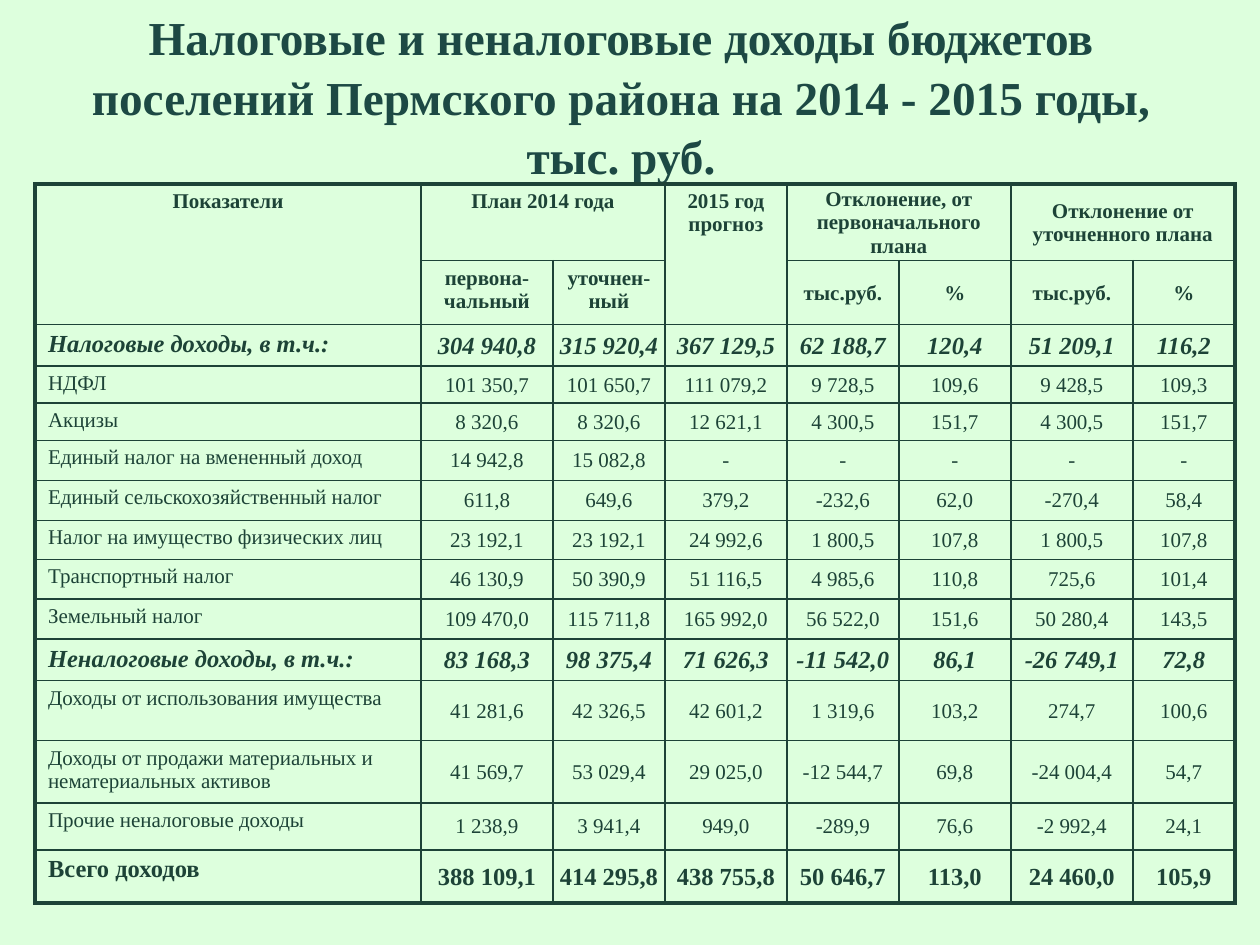
import pptx
import pptx.dml.color
import pptx.enum.text
import pptx.oxml.ns
import pptx.util
from lxml import etree

PX = 914400 // 126


class Theme:
    background = "DDFFDD"
    title_ink = "1D4944"
    ink = "1D4337"
    font = "Times New Roman"
    title_size = 27
    body_size = 12
    total_size = 14
    outer_line = 2.25
    inner_line = 1


TITLE = ("Налоговые и неналоговые доходы бюджетов поселений "
         "Пермского района на 2014 - 2015 годы, тыс. руб.")
TITLE_BOX = (54, 16, 1134, 158)
TABLE_CORNER = (35, 184)
COLUMN_WIDTHS = [386, 132, 112, 122, 112, 112, 122, 102]

# (row, column, rows spanned, columns spanned, text)
HEADERS = [
    (0, 0, 2, 1, "Показатели"),
    (0, 1, 1, 2, "План 2014 года"),
    (0, 3, 2, 1, "2015 год прогноз"),
    (0, 4, 1, 2, "Отклонение, от первоначального плана"),
    (0, 6, 1, 2, "Отклонение от уточненного плана"),
    (1, 1, 1, 1, "первона-чальный"),
    (1, 2, 1, 1, "уточнен-ный"),
    (1, 4, 1, 1, "тыс.руб."),
    (1, 5, 1, 1, "%"),
    (1, 6, 1, 1, "тыс.руб."),
    (1, 7, 1, 1, "%"),
]
HEADER_HEIGHTS = [72, 64]
FIRST_DEVIATION_COLUMN = 4

# (kind, row height, label, values)
INCOME = [
    ("group", 40, "Налоговые доходы, в т.ч.:",
     ["304 940,8", "315 920,4", "367 129,5", "62 188,7", "120,4", "51 209,1", "116,2"]),
    ("item", 36, "НДФЛ",
     ["101 350,7", "101 650,7", "111 079,2", "9 728,5", "109,6", "9 428,5", "109,3"]),
    ("item", 37, "Акцизы",
     ["8 320,6", "8 320,6", "12 621,1", "4 300,5", "151,7", "4 300,5", "151,7"]),
    ("item", 40, "Единый налог на вмененный доход",
     ["14 942,8", "15 082,8", "-", "-", "-", "-", "-"]),
    ("item", 40, "Единый сельскохозяйственный налог",
     ["611,8", "649,6", "379,2", "-232,6", "62,0", "-270,4", "58,4"]),
    ("item", 39, "Налог на имущество физических лиц",
     ["23 192,1", "23 192,1", "24 992,6", "1 800,5", "107,8", "1 800,5", "107,8"]),
    ("item", 40, "Транспортный налог",
     ["46 130,9", "50 390,9", "51 116,5", "4 985,6", "110,8", "725,6", "101,4"]),
    ("item", 40, "Земельный налог",
     ["109 470,0", "115 711,8", "165 992,0", "56 522,0", "151,6", "50 280,4", "143,5"]),
    ("group", 39, "Неналоговые доходы, в т.ч.:",
     ["83 168,3", "98 375,4", "71 626,3", "-11 542,0", "86,1", "-26 749,1", "72,8"]),
    ("item", 60, "Доходы от использования имущества",
     ["41 281,6", "42 326,5", "42 601,2", "1 319,6", "103,2", "274,7", "100,6"]),
    ("item", 59, "Доходы от продажи материальных и нематериальных активов",
     ["41 569,7", "53 029,4", "29 025,0", "-12 544,7", "69,8", "-24 004,4", "54,7"]),
    ("item", 47, "Прочие неналоговые доходы",
     ["1 238,9", "3 941,4", "949,0", "-289,9", "76,6", "-2 992,4", "24,1"]),
    ("total", 53, "Всего доходов",
     ["388 109,1", "414 295,8", "438 755,8", "50 646,7", "113,0", "24 460,0", "105,9"]),
]


def rgb(colour):
    return pptx.dml.color.RGBColor.from_string(colour)


def write(paragraph, text, size, colour, bold, italic=False, centred=True):
    align = pptx.enum.text.PP_ALIGN
    paragraph.alignment = align.CENTER if centred else align.LEFT
    run = paragraph.add_run()
    run.text = text
    run.font.name = Theme.font
    run.font.size = pptx.util.Pt(size)
    run.font.bold = bold
    run.font.italic = italic
    run.font.color.rgb = rgb(colour)


def draw_borders(cell, row, column, row_count, column_count):
    """Thick on the rim of the table, thin inside."""
    last_row = row + max(cell.span_height, 1) == row_count
    last_column = column + max(cell.span_width, 1) == column_count
    on_rim = {"lnL": column == 0, "lnR": last_column, "lnT": row == 0, "lnB": last_row}
    properties = cell._tc.get_or_add_tcPr()
    qn = pptx.oxml.ns.qn
    for side, rim in on_rim.items():
        width = pptx.util.Pt(Theme.outer_line if rim else Theme.inner_line)
        line = etree.SubElement(properties, qn("a:" + side), w=str(int(width)))
        fill = etree.SubElement(line, qn("a:solidFill"))
        etree.SubElement(fill, qn("a:srgbClr"), val=Theme.ink)


def set_layout(cell, compact):
    """Compact cells are centred vertically with almost no margins."""
    anchor = pptx.enum.text.MSO_ANCHOR
    cell.vertical_anchor = anchor.MIDDLE if compact else anchor.TOP
    left, top, right, bottom = (1, 1, 1, 0) if compact else (13, 6, 13, 6)
    cell.margin_left, cell.margin_right = left * PX, right * PX
    cell.margin_top, cell.margin_bottom = top * PX, bottom * PX


def add_title(slide):
    box = slide.shapes.add_textbox(*(length * PX for length in TITLE_BOX))
    frame = box.text_frame
    frame.word_wrap = True
    frame.vertical_anchor = pptx.enum.text.MSO_ANCHOR.MIDDLE
    heading = frame.paragraphs[0]
    heading.line_spacing = 1.05
    write(heading, TITLE, Theme.title_size, Theme.title_ink, bold=True)


def add_income_table(slide):
    heights = HEADER_HEIGHTS + [height for _, height, _, _ in INCOME]
    row_count, column_count = len(heights), len(COLUMN_WIDTHS)
    left, top = TABLE_CORNER
    table = slide.shapes.add_table(
        row_count, column_count, left * PX, top * PX,
        sum(COLUMN_WIDTHS) * PX, sum(heights) * PX).table
    table.first_row = table.horz_banding = False
    for column, width in zip(table.columns, COLUMN_WIDTHS):
        column.width = width * PX
    for row, height in zip(table.rows, heights):
        row.height = height * PX

    for row, column, rows, columns, text in HEADERS:
        cell = table.cell(row, column)
        if rows * columns > 1:
            cell.merge(table.cell(row + rows - 1, column + columns - 1))
        set_layout(cell, compact=column >= FIRST_DEVIATION_COLUMN)
        write(cell.text_frame.paragraphs[0], text, Theme.body_size, Theme.ink, bold=True)

    for row, (kind, _, label, values) in enumerate(INCOME, len(HEADER_HEIGHTS)):
        size = Theme.body_size if kind == "item" else Theme.total_size
        for column, text in enumerate([label] + values):
            cell = table.cell(row, column)
            set_layout(cell, compact=column > 0)
            write(cell.text_frame.paragraphs[0], text, size, Theme.ink,
                  bold=kind != "item", italic=kind == "group", centred=column > 0)

    for row in range(row_count):
        for column in range(column_count):
            cell = table.cell(row, column)
            draw_borders(cell, row, column, row_count, column_count)
            cell.fill.background()


def main():
    deck = pptx.Presentation()
    deck.slide_width, deck.slide_height = 1260 * PX, 945 * PX
    slide = deck.slides.add_slide(deck.slide_layouts[6])
    slide.background.fill.solid()
    slide.background.fill.fore_color.rgb = rgb(Theme.background)
    add_title(slide)
    add_income_table(slide)
    deck.save("out.pptx")


if __name__ == "__main__":
    main()
